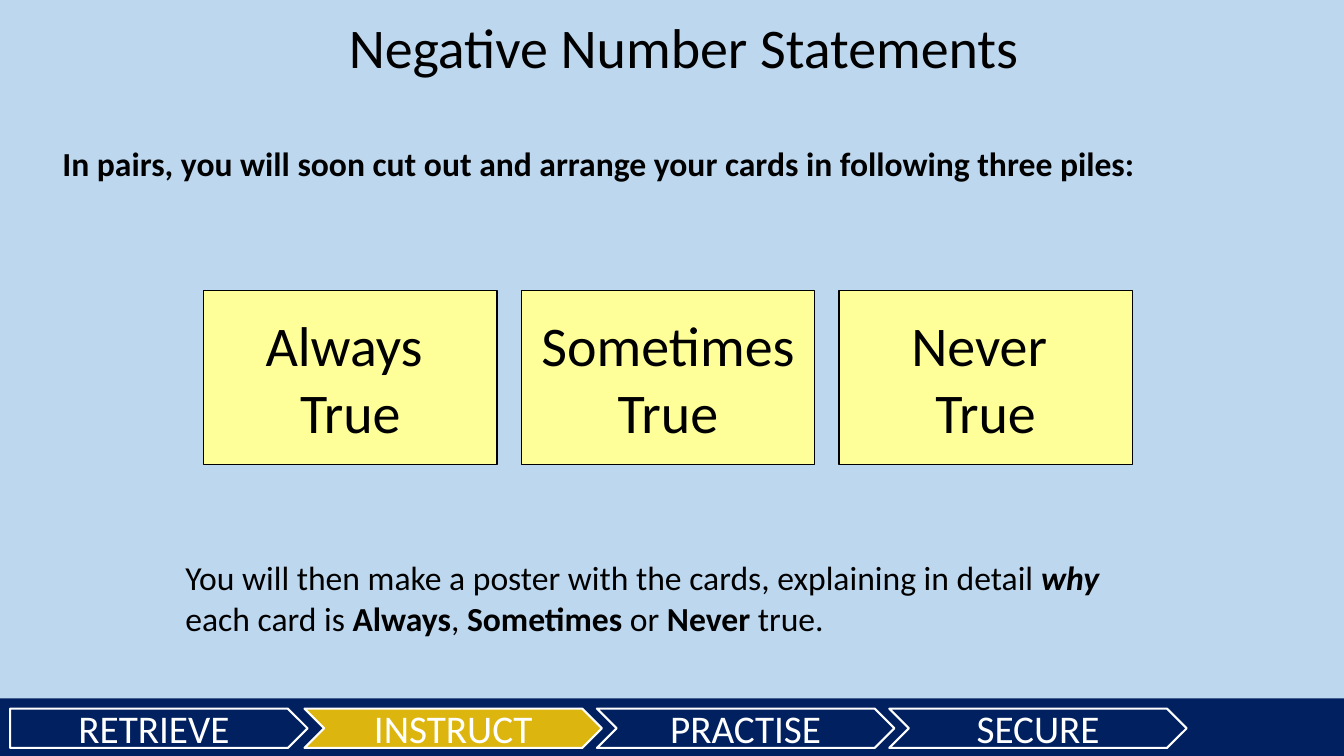
import pptx
import pptx.dml.color
import pptx.enum.shapes
import pptx.enum.text
import pptx.util
from pptx.util import Inches

SHAPES = pptx.enum.shapes.MSO_SHAPE
ALIGN = pptx.enum.text.PP_ALIGN
ANCHOR = pptx.enum.text.MSO_ANCHOR

SKY, NAVY, GOLD = "BDD7EE", "002060", "DCB50E"
YELLOW, BLACK, WHITE = "FFFF99", "000000", "FFFFFF"


def color(value):
    return pptx.dml.color.RGBColor.from_string(value)


def format_text(shape, paragraphs, size, text_color=BLACK, align=ALIGN.LEFT,
                anchor=ANCHOR.TOP, spacing=1.0):
    """Write paragraphs, each a list of (text, font values) runs."""
    frame = shape.text_frame
    frame.word_wrap = True
    frame.auto_size = pptx.enum.text.MSO_AUTO_SIZE.NONE
    frame.vertical_anchor = anchor
    for index, runs in enumerate(paragraphs):
        paragraph = frame.add_paragraph() if index else frame.paragraphs[0]
        paragraph.alignment = align
        paragraph.line_spacing = spacing
        for text, values in runs:
            run = paragraph.add_run()
            run.text = text
            font = {"name": "Calibri", "size": pptx.util.Pt(size),
                    "bold": False, "italic": False, **values}
            for name, value in font.items():
                setattr(run.font, name, value)
            run.font.color.rgb = color(text_color)


def add_box(slide, kind, left, top, width, height, fill, line=None, line_width=1):
    shape = slide.shapes.add_shape(
        kind, Inches(left), Inches(top), Inches(width), Inches(height))
    shape.shadow.inherit = False
    shape.fill.solid()
    shape.fill.fore_color.rgb = color(fill)
    if line:
        shape.line.color.rgb = color(line)
        shape.line.width = pptx.util.Pt(line_width)
    else:
        shape.line.fill.background()
    return shape


def add_text(slide, left, top, width, height, paragraphs, size, **values):
    box = slide.shapes.add_textbox(
        Inches(left), Inches(top), Inches(width), Inches(height))
    format_text(box, paragraphs, size, **values)


def set_title(slide, text):
    title = slide.shapes.title
    place = {"left": 1.84, "top": 0.07, "width": 9.88, "height": 0.77}
    for name, value in place.items():
        setattr(title, name, Inches(value))
    format_text(title, [[(text, {})]], 40, align=ALIGN.CENTER)


def add_stage(slide, kind, left, label, fill):
    stage = add_box(slide, kind, left, 7.03, 2.95, 0.39, fill, WHITE, 1.5)
    format_text(stage, [[(label, {})]], 28, WHITE, ALIGN.CENTER, ANCHOR.MIDDLE)


def add_card(slide, left, lines):
    card = add_box(slide, SHAPES.RECTANGLE, left, 2.88, 2.91, 1.73, YELLOW, BLACK)
    format_text(card, [[(line, {})] for line in lines], 40,
                align=ALIGN.CENTER, anchor=ANCHOR.MIDDLE)


def main():
    presentation = pptx.Presentation()
    presentation.slide_width = Inches(13.33)
    presentation.slide_height = Inches(7.5)
    slide = presentation.slides.add_slide(presentation.slide_layouts[5])
    slide.background.fill.solid()
    slide.background.fill.fore_color.rgb = color(SKY)

    # Lesson stages along the bottom
    add_box(slide, SHAPES.RECTANGLE, 0, 6.93, 13.33, 0.57, NAVY)
    add_stage(slide, SHAPES.PENTAGON, 0.1, "RETRIEVE", NAVY)
    stages = [("INSTRUCT", GOLD), ("PRACTISE", NAVY), ("SECURE", NAVY)]
    for index, (label, fill) in enumerate(stages):
        add_stage(slide, SHAPES.CHEVRON, 3.02 + 2.9 * index, label, fill)

    # Title and task
    bold = {"bold": True}
    set_title(slide, "Negative Number Statements")
    task = ("In pairs, you will soon cut out and arrange your cards "
            "in following three piles:")
    add_text(slide, 0.52, 1.41, 12.81, 0.9, [[(task, bold)]], 24, spacing=0.9)

    # Cards naming the three piles
    cards = [("Always ", "True"), ("Sometimes True",), ("Never ", "True")]
    for index, lines in enumerate(cards):
        add_card(slide, 2.02 + 3.15 * index, lines)

    # Poster instructions
    poster = [
        ("You will then make a poster with the cards, explaining in detail ", {}),
        ("why ", {"bold": True, "italic": True}),
        ("each card is ", {}),
        ("Always", bold),
        (", ", {}),
        ("Sometimes", bold),
        (" or ", {}),
        ("Never", bold),
        (" true.", {}),
    ]
    add_text(slide, 1.74, 5.48, 9.76, 0.91, [poster], 24)

    presentation.save("out.pptx")


if __name__ == "__main__":
    main()
